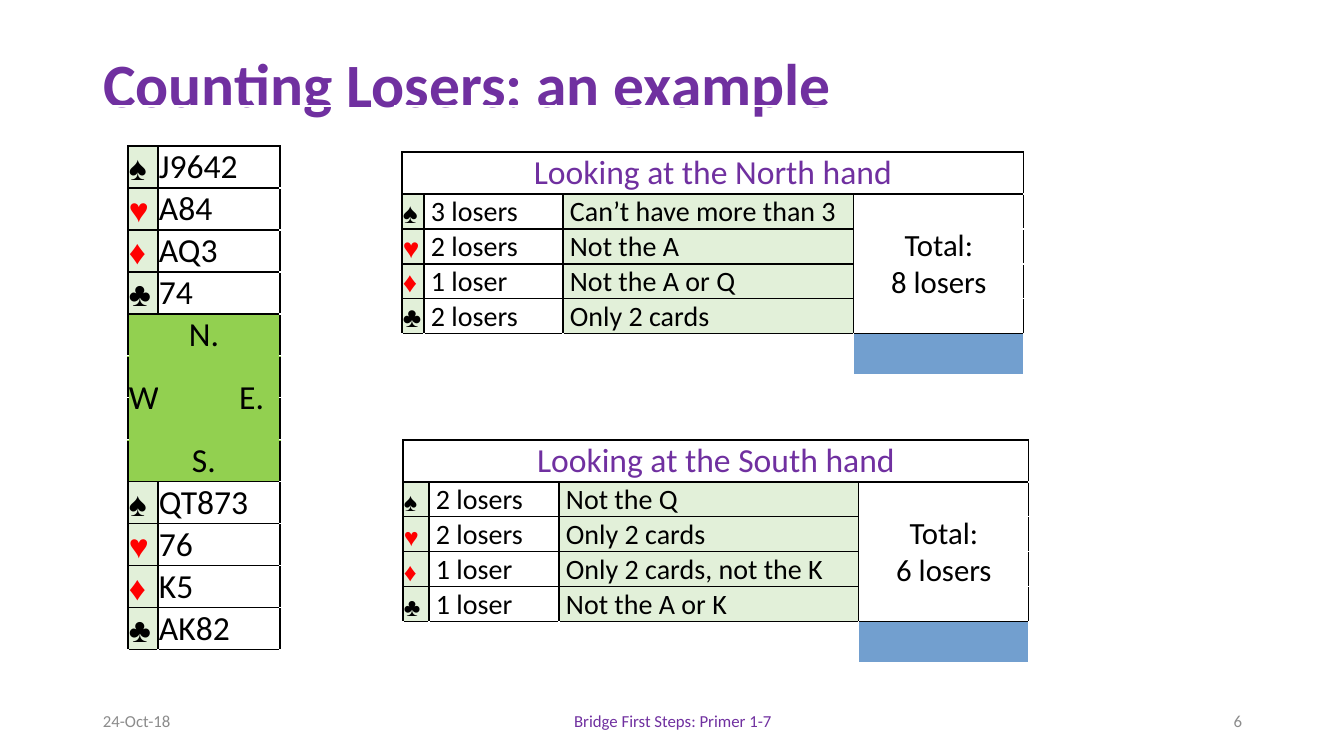
from lxml import etree
from pptx import Presentation
from pptx.dml.color import RGBColor
from pptx.enum.text import MSO_ANCHOR, PP_ALIGN
from pptx.oxml.ns import qn
from pptx.util import Pt

PX = 914400 / 100.8
LEFT, MID, RIGHT = PP_ALIGN.LEFT, PP_ALIGN.CENTER, PP_ALIGN.RIGHT
BOTTOM, CENTRE = MSO_ANCHOR.BOTTOM, MSO_ANCHOR.MIDDLE
HUES = {"black": "000000", "white": "FFFFFF", "red": "FF0000", "grey": "8C8C8C",
        "purple": "7030A0", "pale": "E2F0D9", "green": "92D050"}
SUITS = {"♠": "black", "♥": "red", "♦": "red", "♣": "black"}


def px(count):
    return round(count * PX)


def rgb(hue):
    return RGBColor.from_string(HUES[hue])


def write(frame, text, size, hue="black", align=LEFT, font="Calibri"):
    para = frame.paragraphs[0]
    para.text = text
    para.alignment = align
    para.font.size = Pt(size)
    para.font.name = font
    para.font.color.rgb = rgb(hue)
    return para


def add_grid(slide, left, top, cols, rows):
    """Add a table without fills and return its grid of cells."""
    frame = slide.shapes.add_table(len(rows), len(cols), px(left), px(top),
                                   px(sum(cols)), px(sum(rows)))
    table = frame.table
    table.first_row = table.horz_banding = False
    for col, width in zip(table.columns, cols):
        col.width = px(width)
    for row, height in zip(table.rows, rows):
        row.height = px(height)
    for cell in table.iter_cells():
        cell.margin_left = cell.margin_right = cell.margin_top = px(1)
        cell.margin_bottom = 0
        cell.fill.background()
    return table


def put(cell, text, size, hue="black", align=LEFT, font="Calibri",
        fill=None, anchor=BOTTOM, pad=1):
    write(cell.text_frame, text, size, hue, align, font)
    cell.vertical_anchor = anchor
    cell.margin_left = px(pad)
    if fill:
        cell.fill.solid()
        cell.fill.fore_color.rgb = rgb(fill)


def put_suit(cell, suit, size):
    put(cell, suit, size, SUITS[suit], font="Arial", fill="pale")


def edge(one, two):
    """Return hue and width of the line between two kinds of cell."""
    if one == two == "green":
        return "green", 0.25
    return ("black" if one or two else "white"), 1


def rule(table, kinds):
    """Draw borders; kinds maps (row, column) of cells that show a frame."""
    for row in range(len(table.rows)):
        for col in range(len(table.columns)):
            cell = table.cell(row, col)
            if cell.is_spanned:
                continue
            high = cell.span_height if cell.is_merge_origin else 1
            wide = cell.span_width if cell.is_merge_origin else 1
            sides = {"L": (row, col - 1), "R": (row, col + wide),
                     "T": (row - 1, col), "B": (row + high, col)}
            props = cell._tc.get_or_add_tcPr()
            for spot, (side, near) in enumerate(sides.items()):
                hue, width = edge(kinds.get((row, col)), kinds.get(near))
                line = etree.Element(qn("a:ln" + side), w=str(Pt(width)))
                solid = etree.SubElement(line, qn("a:solidFill"))
                etree.SubElement(solid, qn("a:srgbClr"), val=HUES[hue])
                props.insert(spot, line)


def add_deal(slide, left, top, north, south):
    table = add_grid(slide, left, top, [32, 30, 122, 67], [40] + [42] * 12 + [36])
    for start, hand in ((1, north), (9, south)):
        for row, (suit, cards) in enumerate(zip(SUITS, hand), start):
            put_suit(table.cell(row, 1), suit, 24)
            put(table.cell(row, 2), cards, 24)
    for row, name in ((5, "N."), (8, "S.")):
        table.cell(row, 1).merge(table.cell(row, 2))
        put(table.cell(row, 1), name, 24, align=MID, fill="green")
    for col, name, align in ((1, "W", MID), (2, "E.", RIGHT)):
        table.cell(6, col).merge(table.cell(7, col))
        put(table.cell(6, col), name, 24, align=align, fill="green", anchor=CENTRE)
    table.cell(6, 2).margin_right = px(16)
    rule(table, {(row, col): "green" if 5 <= row <= 8 else "card"
                 for row in range(1, 13) for col in (1, 2)})


def add_count(slide, left, top, cols, ends, size, name, lines, total):
    """Add the loser count of one hand; ends are the outer row heights."""
    table = add_grid(slide, left, top, cols, [ends[0], 42] + [35] * 4 + [ends[1]])
    table.cell(1, 1).merge(table.cell(1, 5))
    put(table.cell(1, 1), f"Looking at the {name} hand", 24, "purple", MID)
    for row in (0, 2, 3, 4, 5, 6):
        table.cell(row, 3).merge(table.cell(row, 4))
    table.cell(2, 5).merge(table.cell(5, 5))
    put(table.cell(2, 5), f"Total:\n{total} losers", 22, align=MID, anchor=CENTRE)
    for row, (suit, (count, why)) in enumerate(zip(SUITS, lines), 2):
        put_suit(table.cell(row, 1), suit, size)
        put(table.cell(row, 2), count, 20, pad=7)
        put(table.cell(row, 3), why, 20, fill="pale", pad=7)
    rule(table, {(row, col): "card" for row in range(1, 6) for col in range(1, 6)})


def add_title(slide, text):
    title = slide.shapes.title
    title.left, title.top, title.width, title.height = map(px, (93, 40, 1159, 95))
    title.text_frame.vertical_anchor = CENTRE
    para = write(title.text_frame, text, 44, "purple")
    para.font.bold = True
    para.line_spacing = 0.9


def add_foot(slide, top, parts):
    for left, width, text, hue, align in parts:
        box = slide.shapes.add_textbox(px(left), px(top), px(width), px(40))
        box.text_frame.word_wrap = True
        box.text_frame.vertical_anchor = CENTRE
        write(box.text_frame, text, 12, hue, align)


def main():
    deck = Presentation()
    deck.slide_width, deck.slide_height = px(1344), px(756)
    slide = deck.slides.add_slide(deck.slide_layouts[5])
    add_title(slide, "Counting Losers: an example")
    add_foot(slide, 701, [
        (446, 454, "Bridge First Steps: Primer 1-7", "purple", MID),
        (93, 302, "24-Oct-18", "grey", LEFT),
        (950, 302, "6", "grey", RIGHT)])
    add_deal(slide, 96, 106, ["J9642", "A84", "AQ3", "74"],
             ["QT873", "76", "K5", "AK82"])
    add_count(slide, 395, 106, [7, 22, 139, 271, 20, 170, 86], (46, 32), 20, "North", [
        ("3 losers", "Can’t have more than 3"), ("2 losers", "Not the A"),
        ("1 loser", "Not the A or Q"), ("2 losers", "Only 2 cards")], 8)
    add_count(slide, 361, 395, [42, 26, 130, 280, 20, 170, 8], (45, 34), 18, "South", [
        ("2 losers", "Not the Q"), ("2 losers", "Only 2 cards"),
        ("1 loser", "Only 2 cards, not the K"), ("1 loser", "Not the A or K")], 6)
    deck.save("out.pptx")


if __name__ == "__main__":
    main()
